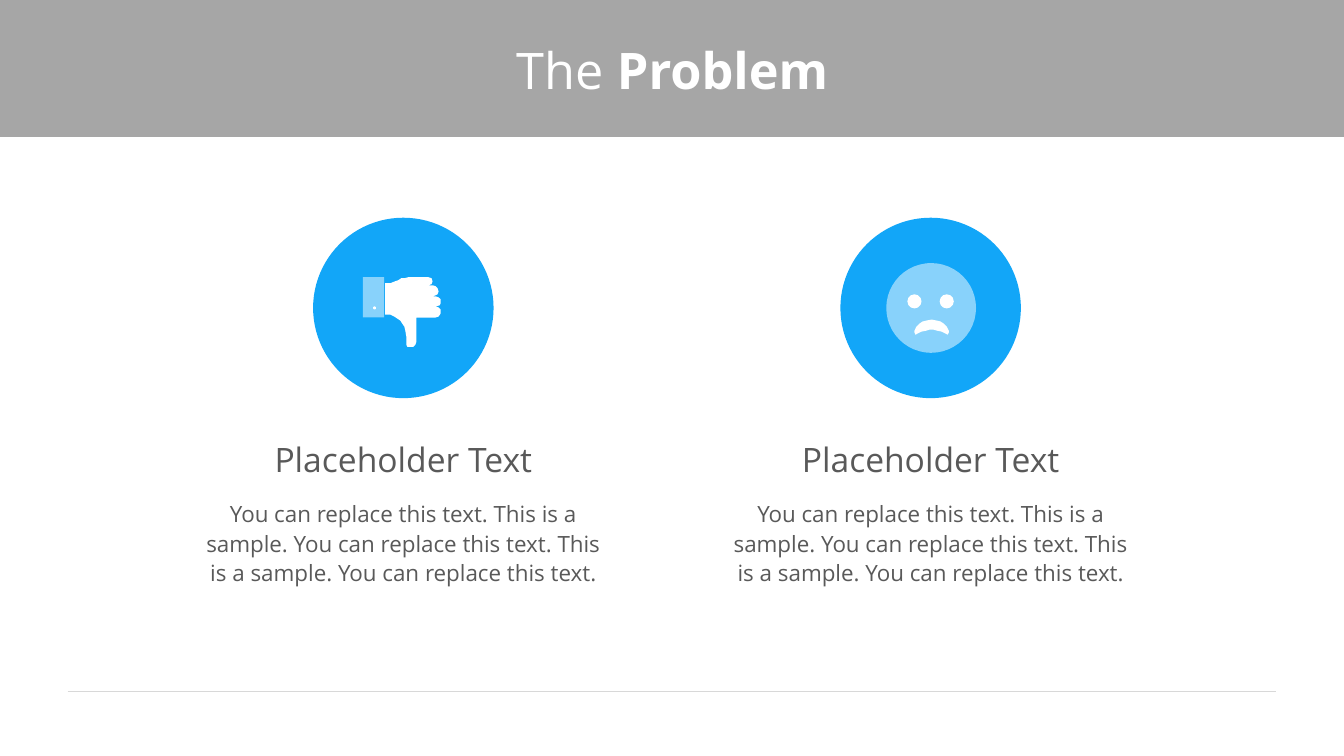
"""Build the slide "The Problem": two icon columns under a title band."""
import lxml.etree
import pptx
import pptx.dml.color
import pptx.enum.shapes
import pptx.enum.text
import pptx.oxml.ns
import pptx.util
from pptx.util import Inches

TITLE_RUNS = [("The", False), (" Problem", True)]
SAMPLE = ("You can replace this text. This is a sample. You can replace this text. "
          "This is a sample. You can replace this text.")
COLUMNS = [
    {"heading": "Placeholder Text", "body": SAMPLE, "icon": "thumb"},
    {"heading": "Placeholder Text", "body": SAMPLE, "icon": "face"},
]
THEME = {
    "font": "Open Sans", "band": "A6A6A6", "accent": "12A6F8", "text": "595959",
    "white": "FFFFFF", "rule": "D8D8D8",
    "title_size": 36, "heading_size": 24, "body_size": 16, "half": 50,
}
HAND = [
    (4.05, 2.75), (4.25, 2.75), (4.28, 2.76), (4.29, 2.79), (4.28, 2.82), (4.25, 2.83),
    (4.29, 2.83), (4.32, 2.84), (4.34, 2.86), (4.35, 2.89), (4.34, 2.92), (4.32, 2.93),
    (4.29, 2.94), (4.32, 2.94), (4.35, 2.95), (4.37, 2.97), (4.37, 3.01), (4.36, 3.03),
    (4.32, 3.04), (4.35, 3.05), (4.37, 3.07), (4.37, 3.11), (4.35, 3.14), (4.32, 3.15),
    (4.13, 3.15), (4.13, 3.39), (4.12, 3.42), (4.1, 3.44), (4.07, 3.44), (4.04, 3.44),
    (4.03, 3.42), (4.03, 3.34), (4.02, 3.28), (4.01, 3.24), (3.99, 3.21), (3.97, 3.18),
    (3.94, 3.16), (3.91, 3.14), (3.87, 3.12), (3.82, 3.12), (3.82, 2.81), (3.87, 2.81),
    (3.92, 2.79), (3.95, 2.78), (3.98, 2.76), (4.01, 2.76),
]
MOUTH_CENTER = 9.24
MOUTH_RIGHT = [
    (0, 3.17), (0.05, 3.18), (0.09, 3.19), (0.12, 3.21), (0.15, 3.24), (0.16, 3.26),
    (0.17, 3.28), (0.17, 3.3), (0.16, 3.32), (0.14, 3.31), (0.1, 3.29), (0.05, 3.28),
    (0.02, 3.27), (0, 3.27),
]
FIRST_CENTER, COLUMN_STEP = 4.0, 5.23
COLUMN_WIDTH, DISC = 4.21, 1.79
OVAL = pptx.enum.shapes.MSO_SHAPE.OVAL
RECTANGLE = pptx.enum.shapes.MSO_SHAPE.RECTANGLE


def color(name):
    return pptx.dml.color.RGBColor.from_string(THEME[name])


def paint(shape, fill, opacity=100):
    shape.shadow.inherit = False
    shape.line.fill.background()
    shape.fill.solid()
    shape.fill.fore_color.rgb = color(fill)
    if opacity < 100:
        tint = shape.element.spPr.find(".//" + pptx.oxml.ns.qn("a:srgbClr"))
        lxml.etree.SubElement(tint, pptx.oxml.ns.qn("a:alpha"), val=str(opacity * 1000))
    return shape


def add_preset(shapes, kind, box, fill, opacity=100):
    return paint(shapes.add_shape(kind, *map(Inches, box)), fill, opacity)


def add_outline(shapes, points):
    corners = [(Inches(x), Inches(y)) for x, y in points]
    builder = shapes.build_freeform(*corners[0])
    builder.add_line_segments(corners[1:], close=True)
    return paint(builder.convert_to_shape(), "white")


def style_font(font, size, fill):
    font.name = THEME["font"]
    font.size = pptx.util.Pt(THEME[size])
    font.color.rgb = color(fill)


def add_label(slide, text, box, size, spacing=1.0):
    frame = slide.shapes.add_textbox(*map(Inches, box)).text_frame
    frame.word_wrap = True
    frame.auto_size = pptx.enum.text.MSO_AUTO_SIZE.SHAPE_TO_FIT_TEXT
    frame.text = text
    paragraph = frame.paragraphs[0]
    paragraph.alignment = pptx.enum.text.PP_ALIGN.CENTER
    paragraph.line_spacing = spacing
    style_font(paragraph.runs[0].font, size, "text")


def add_title(slide):
    band = add_preset(slide.shapes, RECTANGLE, (0, 0, 13.33, 1.36), "band")
    title = slide.shapes.title
    title.element.addprevious(band.element)
    title.left, title.top, title.width, title.height = map(Inches, (0.67, 0.3, 12, 0.78))
    frame = title.text_frame
    frame.margin_left = frame.margin_right = Inches(0.13)
    frame.margin_top = frame.margin_bottom = Inches(0.07)
    frame.vertical_anchor = pptx.enum.text.MSO_ANCHOR.MIDDLE
    paragraph = frame.paragraphs[0]
    paragraph.alignment = pptx.enum.text.PP_ALIGN.CENTER
    for text, bold in TITLE_RUNS:
        run = paragraph.add_run()
        run.text = text
        run.font.bold = bold
        style_font(run.font, "title_size", "white")


def draw_thumb(shapes):
    add_outline(shapes, HAND)
    add_preset(shapes, RECTANGLE, (3.6, 2.75, 0.21, 0.4), "white", THEME["half"])
    add_preset(shapes, OVAL, (3.7, 3.04, 0.03, 0.03), "white")


def draw_face(shapes):
    add_preset(shapes, OVAL, (8.79, 2.61, 0.89, 0.89), "white", THEME["half"])
    right = [(MOUTH_CENTER + x, y) for x, y in MOUTH_RIGHT]
    left = [(MOUTH_CENTER - x, y) for x, y in MOUTH_RIGHT[-2:0:-1]]
    add_outline(shapes, right + left)
    for eye_left in (9.0, 9.32):
        add_preset(shapes, OVAL, (eye_left, 2.92, 0.14, 0.14), "white")


def add_rule(slide):
    rule = slide.shapes.add_connector(
        pptx.enum.shapes.MSO_CONNECTOR.STRAIGHT, *map(Inches, (0.67, 6.86, 12.66, 6.86)))
    rule.line.color.rgb = color("rule")
    rule.line.width = pptx.util.Pt(0.75)
    lxml.etree.SubElement(rule.element.spPr, pptx.oxml.ns.qn("a:effectLst"))


def main():
    icons = {"thumb": draw_thumb, "face": draw_face}
    presentation = pptx.Presentation()
    presentation.slide_width, presentation.slide_height = Inches(13.33), Inches(7.5)
    slide = presentation.slides.add_slide(presentation.slide_layouts[5])
    add_rule(slide)
    add_title(slide)
    for index, column in enumerate(COLUMNS):
        center = FIRST_CENTER + index * COLUMN_STEP
        left = center - COLUMN_WIDTH / 2
        add_preset(slide.shapes, OVAL, (center - DISC / 2, 2.16, DISC, DISC), "accent")
        add_label(slide, column["heading"], (left, 4.31, COLUMN_WIDTH, 0.5), "heading_size")
        add_label(slide, column["body"], (left, 4.89, COLUMN_WIDTH, 0.99), "body_size", 1.1)
        icons[column["icon"]](slide.shapes.add_group_shape().shapes)
    presentation.save("out.pptx")


if __name__ == "__main__":
    main()
